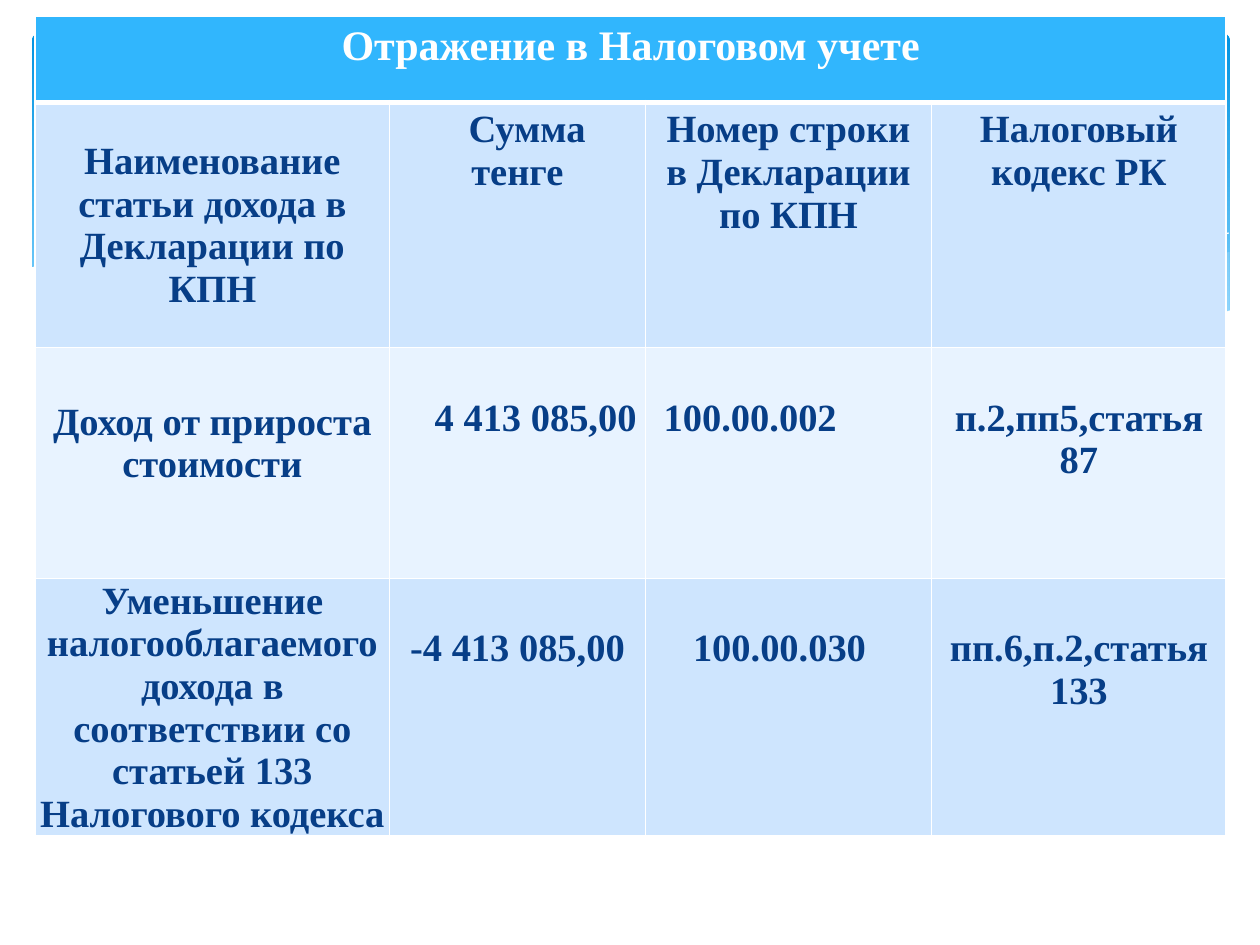
from dataclasses import dataclass
from typing import Optional

from lxml import etree
from pptx import Presentation
from pptx.dml.color import RGBColor
from pptx.enum.shapes import MSO_SHAPE
from pptx.enum.text import MSO_ANCHOR, PP_ALIGN
from pptx.oxml.ns import qn
from pptx.util import Cm, Pt

LEFT, CENTER, RIGHT = PP_ALIGN.LEFT, PP_ALIGN.CENTER, PP_ALIGN.RIGHT
TOP, MIDDLE = MSO_ANCHOR.TOP, MSO_ANCHOR.MIDDLE
ROUNDED = MSO_SHAPE.ROUNDED_RECTANGLE


@dataclass(frozen=True)
class Theme:
    font: str = "Times New Roman"
    title_size: float = 24
    body_size: float = 22
    white: str = "FFFFFF"
    ink: str = "073E87"
    header: str = "31B6FD"
    band_dark: str = "CEE5FE"
    band_light: str = "E8F3FF"
    wave: str = "C6E7FC"
    gradient: tuple = ((0, "0293E0"), (0.9, "83D3FE"))
    border: float = 1
    header_border: float = 3


@dataclass(frozen=True)
class Wave:
    points: tuple
    fill: Optional[str] = None
    opacity: int = 100


@dataclass(frozen=True)
class CellText:
    lines: tuple
    align: PP_ALIGN = CENTER
    indent: float = 0
    top: float = 0.13
    bottom: float = 0.13
    side: float = 0.18
    anchor: MSO_ANCHOR = TOP


THEME = Theme()
LOWERED = 0.99


def name_cell(text: str, bottom: float = 0) -> CellText:
    return CellText((text,), top=0.03, bottom=bottom, side=0.03, anchor=MIDDLE)


WAVES = (
    Wave(((24.79, 5.08), (23.75, 5.26), (21.87, 5.66), (19.13, 6.3), (16.79, 6.73),
          (18.26, 6.91), (20.4, 7.06), (22.15, 6.96), (23.57, 6.68), (24.79, 6.27)),
         THEME.wave, 29),
    Wave(((22.68, 6.93), (20.5, 6.6), (17.93, 6.1), (15.98, 5.64), (13.74, 5.16),
          (11.81, 4.85), (9.65, 4.7), (7.26, 4.85), (9.19, 5.16), (11.4, 5.64),
          (14.38, 6.3), (16.89, 6.76), (19.33, 7.04), (21.03, 7.06)),
         THEME.wave, 40),
    Wave(((7.85, 4.95), (9.5, 4.78), (11.43, 4.78), (14.12, 5), (16.89, 5.41),
          (19.3, 5.92), (23.04, 6.91))),
    Wave(((15.57, 6.53), (18.29, 5.82), (21.23, 5.18), (23.11, 4.88), (24.77, 4.7))),
    Wave(((24.82, 6.25), (23.62, 6.65), (21.59, 6.99), (19.33, 6.99), (16.46, 6.65),
          (13.44, 6.07), (11.35, 5.59), (8.64, 5), (6.35, 4.72), (4.09, 4.67),
          (2.16, 4.9), (0.58, 5.41), (0.58, 8.36), (24.82, 8.36)),
         THEME.white),
)

COLUMN_WIDTHS = (7.14, 5.16, 5.77, 5.94)
ROW_HEIGHTS = (1.73, 4.95, 4.65, 4.65)
ROW_FILLS = (THEME.header, THEME.band_dark, THEME.band_light, THEME.band_dark)
ROWS = (
    (CellText(("Отражение в Налоговом учете",)),),
    (name_cell("Наименование статьи дохода в Декларации по КПН"),
     CellText(("Сумма", "тенге"), indent=0.39),
     CellText(("Номер строки в Декларации по КПН",)),
     CellText(("Налоговый кодекс РК",))),
    (name_cell("Доход от прироста стоимости", bottom=0.81),
     CellText(("4 413 085,00",), RIGHT, top=LOWERED),
     CellText(("100.00.002",), LEFT, 0.19, LOWERED),
     CellText(("п.2,пп5,статья 87",), top=LOWERED)),
    (name_cell("Уменьшение налогооблагаемого дохода в соответствии со статьей 133 "
               "Налогового кодекса"),
     CellText(("-4 413 085,00",), top=LOWERED),
     CellText(("100.00.030",), LEFT, 0.78, LOWERED),
     CellText(("пп.6,п.2,статья 133",), top=LOWERED)),
)


def apply_format(target, values: dict) -> None:
    for name, value in values.items():
        setattr(target, name, value)


def paint(fill, color: str) -> None:
    fill.solid()
    fill.fore_color.rgb = RGBColor.from_string(color)


def draw_backdrop(slide) -> None:
    shape = slide.shapes.add_shape(ROUNDED, Cm(0.64), Cm(0.64), Cm(24.16), Cm(6.86))
    shape.adjustments[0] = 0.03
    shape.shadow.inherit = False
    shape.line.fill.background()
    shape.fill.gradient()
    shape.fill.gradient_angle = 270
    for stop, (position, color) in zip(shape.fill.gradient_stops, THEME.gradient):
        stop.position = position
        stop.color.rgb = RGBColor.from_string(color)


def draw_wave(slide, wave: Wave) -> None:
    points = [(x * 100, y * 100) for x, y in wave.points]
    builder = slide.shapes.build_freeform(*points[0], scale=Cm(0.01))
    builder.add_line_segments(points[1:], close=wave.fill is not None)
    shape = builder.convert_to_shape()
    shape.shadow.inherit = False
    if wave.fill is None:
        shape.fill.background()
        paint(shape.line.fill, THEME.white)
        shape.line.width = Cm(0)
        return
    shape.line.fill.background()
    paint(shape.fill, wave.fill)
    if wave.opacity < 100:
        color = shape.fill._xPr.find(f"{qn('a:solidFill')}/{qn('a:srgbClr')}")
        etree.SubElement(color, qn("a:alpha"), val=str(wave.opacity * 1000))


def draw_borders(cell, row_index: int) -> None:
    widths = dict.fromkeys(("lnL", "lnR", "lnT", "lnB"), THEME.border)
    if row_index == 0:
        widths["lnB"] = THEME.header_border
    if row_index == 1:
        widths["lnT"] = THEME.header_border
    properties = cell._tc.get_or_add_tcPr()
    for side, width in widths.items():
        line = etree.SubElement(properties, qn(f"a:{side}"), w=str(Pt(width)))
        solid = etree.SubElement(line, qn("a:solidFill"))
        etree.SubElement(solid, qn("a:srgbClr"), val=THEME.white)


def write_cell(cell, content: CellText, size: float, color: str) -> None:
    apply_format(cell, {
        "margin_left": Cm(content.side), "margin_right": Cm(content.side),
        "margin_top": Cm(content.top), "margin_bottom": Cm(content.bottom),
        "vertical_anchor": content.anchor,
    })
    frame = cell.text_frame
    frame.text = "\n".join(content.lines)
    for index, paragraph in enumerate(frame.paragraphs):
        paragraph.alignment = content.align
        if index == 0 and content.indent:
            paragraph._p.get_or_add_pPr().set("marL", str(Cm(content.indent)))
        for run in paragraph.runs:
            apply_format(run.font, {"name": THEME.font, "size": Pt(size), "bold": True})
            run.font.color.rgb = RGBColor.from_string(color)


def draw_table(slide) -> None:
    table = slide.shapes.add_table(
        len(ROW_HEIGHTS), len(COLUMN_WIDTHS), Cm(0.71), Cm(0.33),
        Cm(sum(COLUMN_WIDTHS)), Cm(sum(ROW_HEIGHTS))).table
    for column, width in zip(table.columns, COLUMN_WIDTHS):
        column.width = Cm(width)
    for row_index, (row, height) in enumerate(zip(table.rows, ROW_HEIGHTS)):
        row.height = Cm(height)
        for cell in row.cells:
            draw_borders(cell, row_index)
            paint(cell.fill, ROW_FILLS[row_index])
        size, color = ((THEME.title_size, THEME.white) if row_index == 0
                       else (THEME.body_size, THEME.ink))
        for cell, content in zip(row.cells, ROWS[row_index]):
            write_cell(cell, content, size, color)
    table.cell(0, 0).merge(table.cell(0, len(COLUMN_WIDTHS) - 1))


def main() -> None:
    presentation = Presentation()
    apply_format(presentation, {"slide_width": Cm(25.4), "slide_height": Cm(19.05)})
    slide = presentation.slides.add_slide(presentation.slide_layouts[6])
    draw_backdrop(slide)
    for wave in WAVES:
        draw_wave(slide, wave)
    draw_table(slide)
    presentation.save("out.pptx")


if __name__ == "__main__":
    main()
